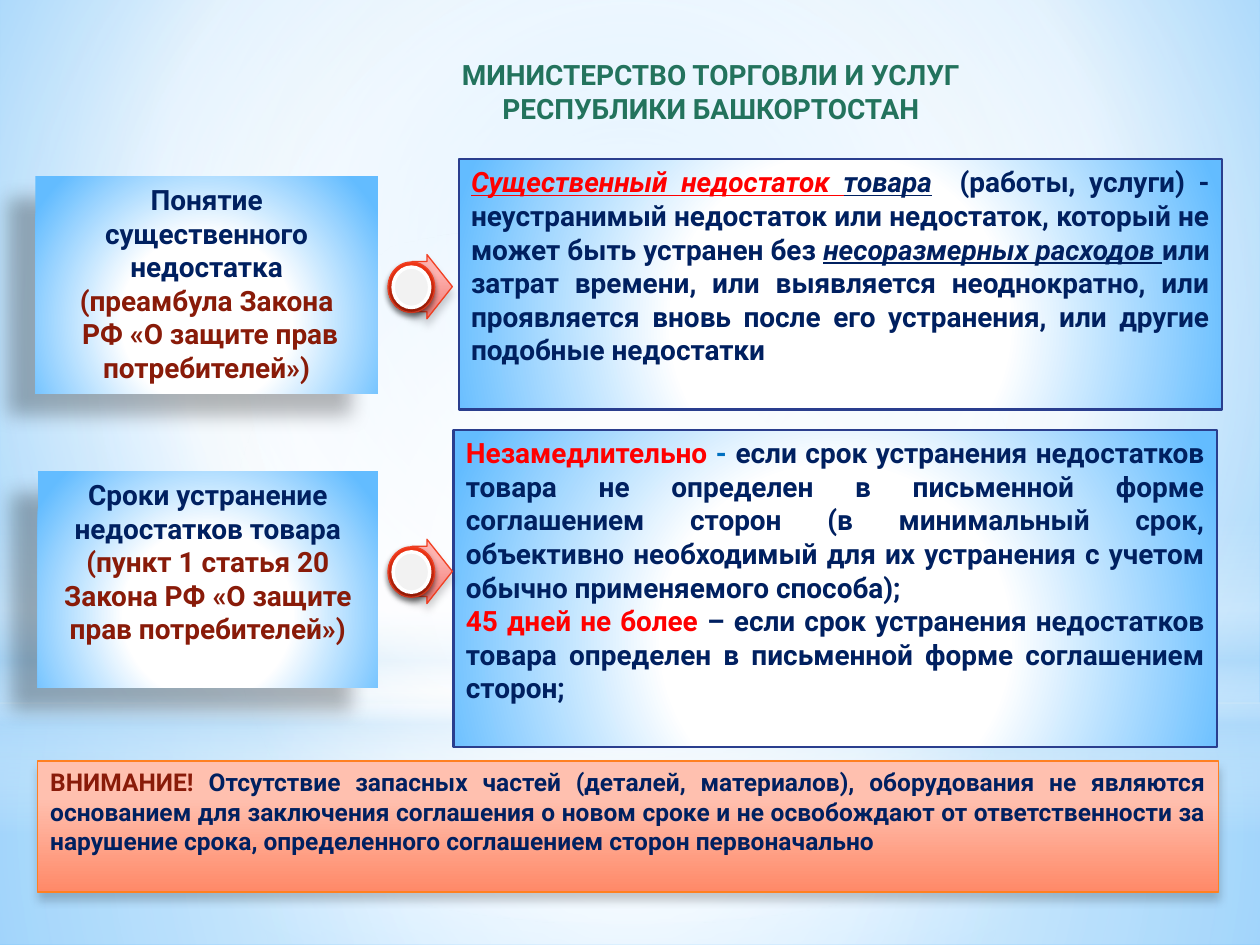
from lxml import etree
from pptx import Presentation
from pptx.dml.color import RGBColor
from pptx.enum.shapes import MSO_SHAPE
from pptx.enum.text import MSO_ANCHOR, PP_ALIGN
from pptx.oxml.ns import qn
from pptx.util import Inches, Pt

RECT, OVAL = MSO_SHAPE.RECTANGLE, MSO_SHAPE.OVAL
ARROW, CONNECTOR = MSO_SHAPE.RIGHT_ARROW, MSO_SHAPE.FLOWCHART_CONNECTOR
CENTER, JUSTIFY, TOP = PP_ALIGN.CENTER, PP_ALIGN.JUSTIFY, MSO_ANCHOR.TOP

FONT = "Roboto"
COLORS = {
    "navy": "002060", "maroon": "891B09", "red": "FF0000", "blue": "0070C0",
    "green": "23735D", "white": "FFFFFF", "black": "000000", "sky": "63BCFF",
    "mist": "B4DCFA", "bg_edge": "5BB9FF", "bg_center": "9ED5FF",
    "frame": "2A3E8E", "pink": "FDB2AF", "coral": "F07873", "ring": "F14124",
    "ring_top": "F03617", "ring_bottom": "B52007", "disc": "F2F2F2",
    "peach": "FFC0AF", "salmon": "FF8968", "orange": "FF8021",
}

# Gradients: stops of (position %, colour, opacity %), then focus rectangle or angle
MIDDLE = (50, 50, 50, 50)
CARD_FILL = dict(stops=[(0, "white"), (42, "white"), (100, "sky")],
                 focus=(24, 44, 24, 12))
ARROW_FILL = dict(stops=[(28, "pink"), (100, "coral")], angle=90)
RING_FILL = dict(stops=[(0, "ring_top"), (100, "ring_bottom")], angle=90)
NOTICE_FILL = dict(stops=[(28, "peach"), (100, "salmon")], angle=90)

# Shadows: opacity %, blur pt, distance pt, direction
CARD_SHADOW = (28, 11.8, 19.7, 141)
SOFT_SHADOW = (20, 5, 4, 90)
RING_SHADOW = (45, 3.1, 1.8, 90)


def rgb(name):
    return RGBColor.from_string(COLORS[name])


def add_color(parent, name, opacity):
    color = etree.SubElement(parent, qn("a:srgbClr"), val=COLORS[name])
    if opacity < 100:
        etree.SubElement(color, qn("a:alpha"), val=str(opacity * 1000))


def set_gradient(fill, owner, stops, focus=None, angle=0):
    fill.gradient()
    gradient = next(owner.iter(qn("a:gradFill")))
    for child in list(gradient):
        gradient.remove(child)
    stop_list = etree.SubElement(gradient, qn("a:gsLst"))
    for position, name, *opacity in stops:
        stop = etree.SubElement(stop_list, qn("a:gs"), pos=str(position * 1000))
        add_color(stop, name, opacity[0] if opacity else 100)
    if focus:
        shade = etree.SubElement(gradient, qn("a:path"), path="circle")
        sides = {side: str(v * 1000) for side, v in zip("ltrb", focus)}
        etree.SubElement(shade, qn("a:fillToRect"), **sides)
    else:
        etree.SubElement(gradient, qn("a:lin"), ang=str(angle * 60000), scaled="0")


def set_shadow(shape, opacity, blur, distance, direction):
    effects = shape._element.spPr.find(qn("a:effectLst"))
    shadow = etree.SubElement(
        effects, qn("a:outerShdw"), blurRad=str(Pt(blur)), dist=str(Pt(distance)),
        dir=str(direction * 60000), algn="ctr", rotWithShape="0")
    add_color(shadow, "black", opacity)


def add_panel(shapes, kind, box, fill, line=None, shadow=None):
    panel = shapes.add_shape(kind, *map(Inches, box))
    if isinstance(fill, dict):
        set_gradient(panel.fill, panel._element.spPr, **fill)
    else:
        panel.fill.solid()
        panel.fill.fore_color.rgb = rgb(fill)
    if line:
        panel.line.color.rgb = rgb(line[0])
        panel.line.width = Pt(line[1])
    else:
        panel.line.fill.background()
    panel.shadow.inherit = False
    if shadow:
        set_shadow(panel, *shadow)
    return panel


def write(shape, paragraphs, align, size=16):
    """Each paragraph is a list of runs: (text, colour, "i" and/or "u")."""
    frame = shape.text_frame
    frame.word_wrap = True
    frame.vertical_anchor = TOP
    for index, runs in enumerate(paragraphs):
        paragraph = frame.add_paragraph() if index else frame.paragraphs[0]
        paragraph.alignment = align
        paragraph.font.name = FONT
        paragraph.font.size = Pt(size)
        paragraph.font.bold = True
        for text, color, *style in runs:
            run = paragraph.add_run()
            run.text = text
            run.font.color.rgb = rgb(color)
            if style:
                run.font.italic = "i" in style[0]
                run.font.underline = "u" in style[0]


def add_backdrop(slide):
    set_gradient(slide.background.fill, slide._element,
                 [(0, "bg_center"), (60, "white"), (100, "bg_edge")], (20, 10, 20, 60))
    layers = [
        (RECT, (0, 5.58, 10, 1.92), dict(focus=MIDDLE, stops=[
            (0, "white", 91), (37, "white", 76), (100, "mist", 79)])),
        (RECT, (0, 0, 10, 5.58), dict(focus=MIDDLE, stops=[
            (0, "white", 89), (48, "white", 62), (100, "mist", 79)])),
        (RECT, (0, 4.12, 10, 2.5), dict(angle=90, stops=[
            (0, "white", 0), (29, "white", 30), (45, "mist", 40),
            (55, "white", 26), (65, "mist", 60), (100, "white", 0)])),
        (OVAL, (0, 1.75, 10, 5.58), dict(focus=MIDDLE, stops=[
            (0, "white"), (56, "white", 0)])),
    ]
    for kind, box, fill in layers:
        add_panel(slide.shapes, kind, box, fill)


def add_topic(slide, box, paragraphs):
    topic = add_panel(slide.shapes, RECT, box, CARD_FILL, shadow=CARD_SHADOW)
    write(topic, paragraphs, CENTER)


def add_definition(slide, box, paragraphs):
    definition = add_panel(slide.shapes, RECT, box, CARD_FILL, ("frame", 1.25))
    write(definition, paragraphs, JUSTIFY)


def add_pointer(slide, top):
    parts = slide.shapes.add_group_shape().shapes
    arrow = add_panel(parts, ARROW, (3.27, top, 0.32, 0.51), ARROW_FILL,
                      ("ring", 0.75), SOFT_SHADOW)
    arrow.adjustments[0], arrow.adjustments[1] = 0.78, 0.63
    add_panel(parts, CONNECTOR, (3.08, top + 0.06, 0.37, 0.4), RING_FILL,
              ("ring", 0.75), RING_SHADOW)
    add_panel(parts, CONNECTOR, (3.12, top + 0.1, 0.29, 0.32), "disc",
              ("white", 2), SOFT_SHADOW)


def main():
    prs = Presentation()
    prs.slide_width, prs.slide_height = Inches(10), Inches(7.5)
    slide = prs.slides.add_slide(prs.slide_layouts[6])
    add_backdrop(slide)

    # Heading
    heading = slide.shapes.add_textbox(*map(Inches, (1.88, 0.41, 7.58, 0.64)))
    write(heading, [[("МИНИСТЕРСТВО ТОРГОВЛИ И УСЛУГ ", "green")],
                    [("РЕСПУБЛИКИ БАШКОРТОСТАН ", "green")]], CENTER)

    # Substantial defect
    add_topic(slide, (0.28, 1.4, 2.72, 1.72), [
        [("Понятие существенного недостатка", "navy")],
        [("(преамбула Закона", "maroon")],
        [(" РФ «О защите прав потребителей»)", "maroon")]])
    add_definition(slide, (3.64, 1.26, 6.06, 1.99), [[
        ("Существенный недостаток ", "red", "iu"),
        ("товара", "navy", "iu"),
        ("  (работы, услуги) - неустранимый недостаток или недостаток, "
         "который не может быть устранен без ", "navy"),
        ("несоразмерных расходов ", "navy", "iu"),
        ("или затрат времени, или выявляется неоднократно, или проявляется "
         "вновь после его устранения, или другие подобные недостатки", "navy")]])
    add_pointer(slide, 2.02)

    # Repair deadlines
    add_topic(slide, (0.3, 3.74, 2.7, 1.72), [
        [("Сроки устранение недостатков товара", "navy")],
        [("(пункт 1 статья 20 Закона РФ «О защите прав потребителей»)", "maroon")]])
    add_definition(slide, (3.6, 3.41, 6.06, 2.52), [
        [("Незамедлительно", "red"), (" - ", "blue"),
         ("если срок устранения недостатков товара не определен в письменной "
          "форме соглашением сторон (в минимальный срок, объективно необходимый "
          "для их устранения с учетом обычно применяемого способа);", "navy")],
        [("45 дней не более ", "red"),
         ("– если срок устранения недостатков товара определен в письменной "
          "форме соглашением сторон;", "navy")]])
    add_pointer(slide, 4.28)

    # Warning
    warning = add_panel(slide.shapes, RECT, (0.3, 6.04, 9.37, 1.04), NOTICE_FILL,
                        ("orange", 0.75), SOFT_SHADOW)
    write(warning, [[
        ("ВНИМАНИЕ! ", "maroon"),
        ("Отсутствие запасных частей (деталей, материалов), оборудования не "
         "являются основанием для заключения соглашения о новом сроке и не "
         "освобождают от ответственности за нарушение срока, определенного "
         "соглашением сторон первоначально", "navy")]], JUSTIFY, size=14)

    prs.save("out.pptx")


if __name__ == "__main__":
    main()
